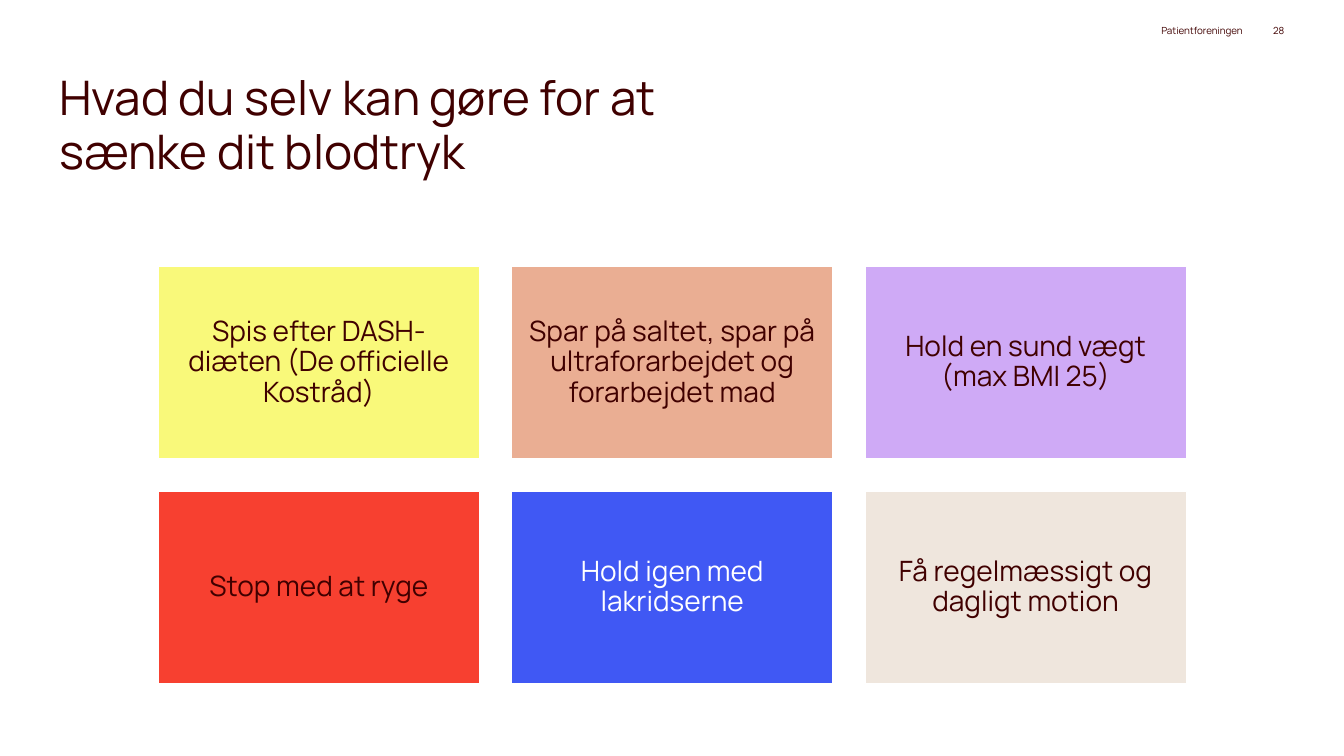
from dataclasses import dataclass

from pptx import Presentation
from pptx.dml.color import RGBColor
from pptx.enum.shapes import MSO_SHAPE
from pptx.enum.text import MSO_ANCHOR, PP_ALIGN
from pptx.util import Pt

RECTANGLE = MSO_SHAPE.RECTANGLE
MIDDLE, BOTTOM = MSO_ANCHOR.MIDDLE, MSO_ANCHOR.BOTTOM
LEFT, CENTER, RIGHT = PP_ALIGN.LEFT, PP_ALIGN.CENTER, PP_ALIGN.RIGHT

MAROON = RGBColor(0x40, 0x00, 0x00)
WHITE = RGBColor(0xFF, 0xFF, 0xFF)
YELLOW = RGBColor(0xF9, 0xF9, 0x7A)
PEACH = RGBColor(0xEA, 0xAE, 0x93)
LILAC = RGBColor(0xCF, 0xAA, 0xF6)
RED = RGBColor(0xF7, 0x40, 0x30)
BLUE = RGBColor(0x40, 0x58, 0xF4)
SAND = RGBColor(0xEF, 0xE6, 0xDD)

FONT = "Manrope"
COLUMNS = 3
GRID_LEFT, GRID_TOP = 113, 190.2
CARD_WIDTH, CARD_HEIGHT = 229.6, 137.8
COLUMN_STEP, ROW_STEP = 252.4, 160.7


@dataclass(frozen=True)
class TextStyle:
    size: float
    align: PP_ALIGN
    anchor: MSO_ANCHOR
    line_spacing: float = 1.0
    inset: float = 0


@dataclass(frozen=True)
class Label:
    text: str
    left: float
    top: float
    width: float
    height: float
    style: TextStyle


@dataclass(frozen=True)
class Advice:
    text: str
    fill: RGBColor
    color: RGBColor = MAROON


TITLE_STYLE = TextStyle(34, LEFT, BOTTOM, 0.95)
HEADER_STYLE = TextStyle(7, RIGHT, MIDDLE)
CARD_STYLE = TextStyle(20, CENTER, MIDDLE, 0.9, 6)

LABELS = [
    Label("Hvad du selv kan gøre for at sænke dit blodtryk",
          42.5, 36.7, 429, 92.2, TITLE_STYLE),
    Label("Patientforeningen", 487.4, 14.4, 400.3, 14.4, HEADER_STYLE),
    Label("28", 889.2, 14.4, 28.1, 14.4, HEADER_STYLE),
]

ADVICE = [
    Advice("Spis efter DASH-diæten (De officielle Kostråd)", YELLOW),
    Advice("Spar på saltet, spar på ultraforarbejdet og forarbejdet mad", PEACH),
    Advice("Hold en sund vægt (max BMI 25)", LILAC),
    Advice("Stop med at ryge", RED),
    Advice("Hold igen med lakridserne", BLUE, WHITE),
    Advice("Få regelmæssigt og dagligt motion", SAND),
]


def write_text(frame, text: str, style: TextStyle, color: RGBColor) -> None:
    frame.word_wrap = True
    frame.vertical_anchor = style.anchor
    frame.margin_left = frame.margin_right = Pt(style.inset)
    frame.margin_top = frame.margin_bottom = Pt(style.inset)
    paragraph = frame.paragraphs[0]
    paragraph.alignment = style.align
    paragraph.line_spacing = style.line_spacing
    run = paragraph.add_run()
    run.text = text
    run.font.name = FONT
    run.font.size = Pt(style.size)
    run.font.color.rgb = color


def draw_label(slide, label: Label) -> None:
    box = slide.shapes.add_textbox(
        Pt(label.left), Pt(label.top), Pt(label.width), Pt(label.height))
    write_text(box.text_frame, label.text, label.style, MAROON)


def draw_card(slide, index: int, advice: Advice) -> None:
    row, column = divmod(index, COLUMNS)
    card = slide.shapes.add_shape(
        RECTANGLE,
        Pt(GRID_LEFT + column * COLUMN_STEP), Pt(GRID_TOP + row * ROW_STEP),
        Pt(CARD_WIDTH), Pt(CARD_HEIGHT))
    card.shadow.inherit = False
    card.fill.solid()
    card.fill.fore_color.rgb = advice.fill
    card.line.color.rgb = WHITE
    card.line.width = Pt(1)
    write_text(card.text_frame, advice.text, CARD_STYLE, advice.color)


def main() -> None:
    presentation = Presentation()
    presentation.slide_width = Pt(960)
    presentation.slide_height = Pt(540)
    slide = presentation.slides.add_slide(presentation.slide_layouts[6])
    for label in LABELS:
        draw_label(slide, label)
    for index, advice in enumerate(ADVICE):
        draw_card(slide, index, advice)
    presentation.save("out.pptx")


if __name__ == "__main__":
    main()
